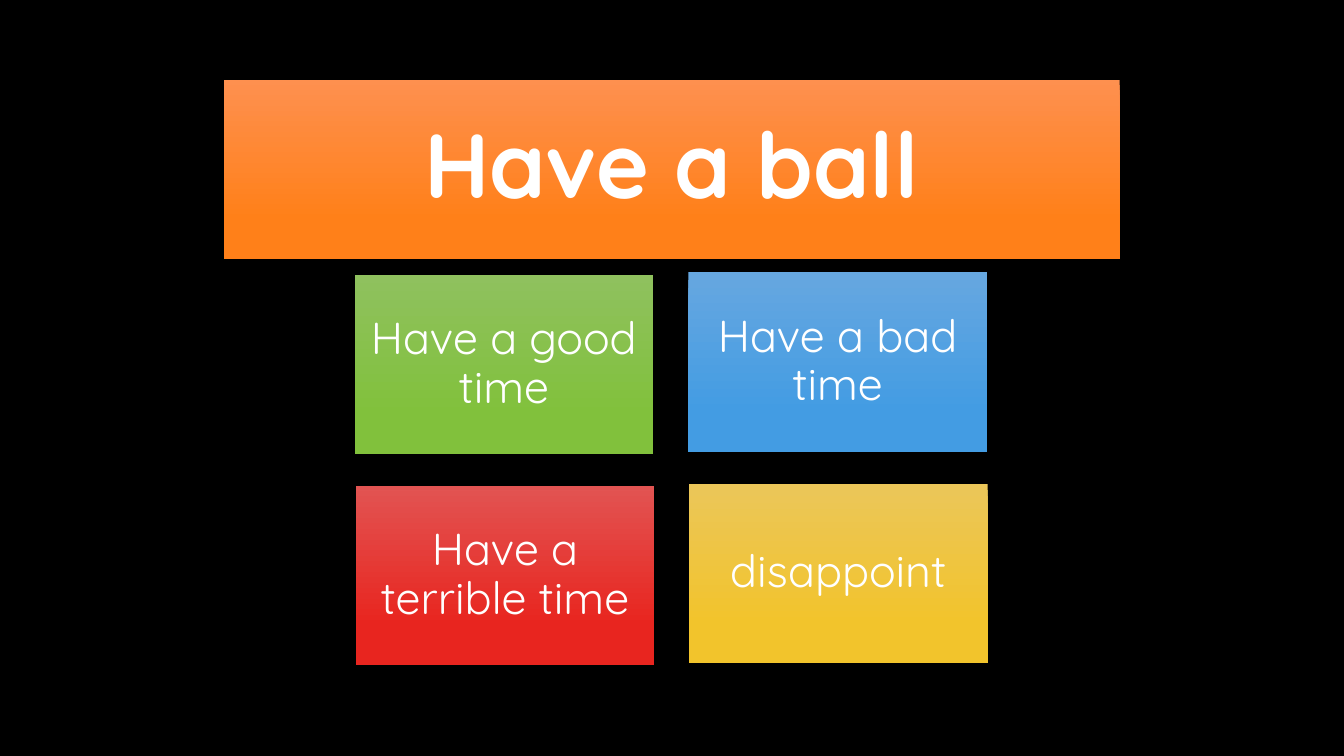
"""Build a quiz slide: one phrase banner above four answer cards."""
from dataclasses import dataclass

from pptx import Presentation
from pptx.dml.color import RGBColor as RGB
from pptx.enum.shapes import MSO_SHAPE as Shape
from pptx.enum.text import MSO_ANCHOR as Anchor, PP_ALIGN as Align
from pptx.slide import Slide
from pptx.util import Cm, Pt

COLORS = {
    "background": "000000",
    "text": "FFFFFF",
    "orange_top": "FE904F",
    "orange": "FF8019",
    "green_top": "8FC15E",
    "green": "81C13C",
    "blue_top": "66A7E0",
    "blue": "439CE3",
    "red_top": "E25452",
    "red": "E8251F",
    "yellow_top": "EBC659",
    "yellow": "F2C42C",
}
FONT = "Quicksand"
CARD_HEIGHT = 4.52


@dataclass(frozen=True)
class Card:
    text: str
    color: str
    left: float
    top: float
    width: float = 7.52
    size: int = 32
    inset: float = 0.33
    bold: bool = False


CARDS = [
    Card("Have a good time", "green", 8.94, 6.93),
    Card("Have a bad time", "blue", 17.35, 6.86),
    Card("Have a terrible time", "red", 8.97, 12.24),
    Card("disappoint", "yellow", 17.37, 12.19),
    Card("Have a ball", "orange", 5.64, 2.01, 22.58, 65, 0.69, True),
]


def rgb(name: str) -> RGB:
    return RGB.from_string(COLORS[name])


def draw_card(s: Slide, card: Card) -> None:
    sp = s.shapes.add_shape(
        Shape.RECTANGLE, Cm(card.left), Cm(card.top), Cm(card.width), Cm(CARD_HEIGHT)
    )
    sp.shadow.inherit = False
    sp.line.fill.background()
    sp.fill.gradient()
    sp.fill.gradient_angle = 270
    stops = ((0, card.color + "_top"), (0.78, card.color))
    for stop, (position, color) in zip(sp.fill.gradient_stops, stops):
        stop.position = position
        stop.color.rgb = rgb(color)

    tf = sp.text_frame
    tf.word_wrap = True
    tf.vertical_anchor = Anchor.MIDDLE
    tf.margin_left = tf.margin_right = Cm(card.inset)
    tf.margin_top = tf.margin_bottom = Cm(card.inset)
    p = tf.paragraphs[0]
    p.text = card.text
    p.alignment = Align.CENTER
    p.line_spacing = 0.9
    p.font.name = FONT
    p.font.size = Pt(card.size)
    p.font.bold = card.bold
    p.font.color.rgb = rgb("text")


def main() -> None:
    prs = Presentation()
    prs.slide_width, prs.slide_height = Cm(33.87), Cm(19.05)
    s = prs.slides.add_slide(prs.slide_layouts[6])
    s.background.fill.solid()
    s.background.fill.fore_color.rgb = rgb("background")
    for card in CARDS:
        draw_card(s, card)
    prs.save("out.pptx")


if __name__ == "__main__":
    main()
